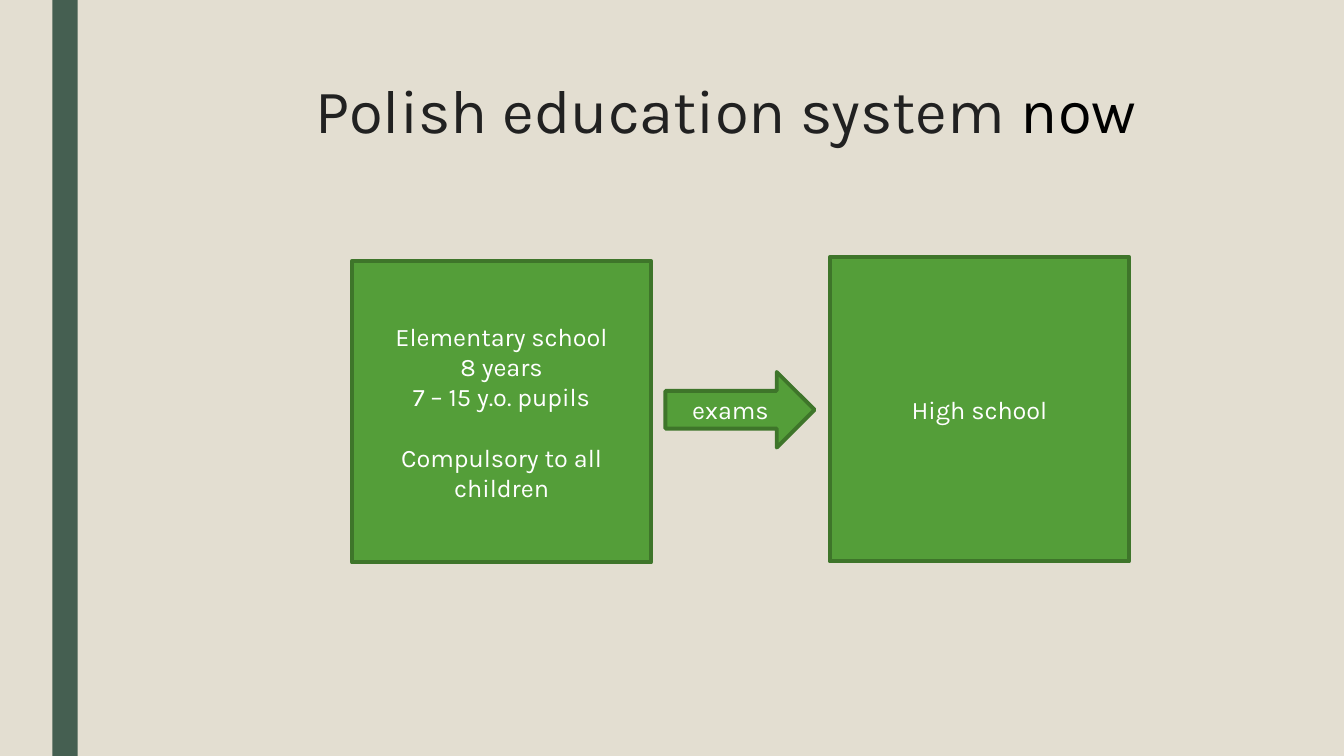
from dataclasses import dataclass

from pptx import Presentation
from pptx import util as u
from pptx.dml.color import RGBColor
from pptx.enum import shapes, text


@dataclass(frozen=True)
class Theme:
    font: str = "Karla"
    title_size: int = 44
    body_size: int = 18
    line_width: float = 2.75
    background: str = "E3DED1"
    bar: str = "455F51"
    fill: str = "549E39"
    outline: str = "3E752A"
    title: str = "212121"
    emphasis: str = "000000"
    label: str = "FFFFFF"


@dataclass(frozen=True)
class Area:
    """A rectangle in percent of the slide's width and height."""
    left: float
    top: float
    width: float
    height: float


@dataclass(frozen=True)
class Stage:
    area: Area
    kind: shapes.MSO_SHAPE
    lines: tuple[str, ...]
    closing: str = ""


THEME = Theme()
SLIDE_WIDTH, SLIDE_HEIGHT = u.Inches(13.33), u.Inches(7.5)
BAR_AREA = Area(3.9, 0, 1.88, 100)
TITLE_AREA = Area(11.25, 10, 85.52, 14.27)
STAGES = (
    Stage(Area(26.18, 34.53, 22.28, 39.87), shapes.MSO_SHAPE.RECTANGLE,
          ("Elementary school", "8 years", "7 – 15 y.o. pupils"),
          "Compulsory to all children"),
    Stage(Area(61.74, 34, 22.28, 40.27), shapes.MSO_SHAPE.RECTANGLE,
          ("High school",)),
    Stage(Area(49.51, 49.2, 11.1, 10), shapes.MSO_SHAPE.RIGHT_ARROW,
          ("exams",)),
)


def color(value: str) -> RGBColor:
    return RGBColor.from_string(value)


def place(area: Area) -> tuple[int, int, int, int]:
    """Turn percentages into left, top, width and height."""
    return (round(area.left * SLIDE_WIDTH / 100),
            round(area.top * SLIDE_HEIGHT / 100),
            round(area.width * SLIDE_WIDTH / 100),
            round(area.height * SLIDE_HEIGHT / 100))


def add_filled_shape(slide, kind: shapes.MSO_SHAPE, area: Area, fill: str):
    shape = slide.shapes.add_shape(kind, *place(area))
    shape.shadow.inherit = False
    shape.fill.solid()
    shape.fill.fore_color.rgb = color(fill)
    return shape


def add_bar(slide) -> None:
    bar = add_filled_shape(slide, shapes.MSO_SHAPE.RECTANGLE, BAR_AREA, THEME.bar)
    bar.line.fill.background()


def write_title(slide) -> None:
    title = slide.shapes.title
    title.left, title.top, title.width, title.height = place(TITLE_AREA)
    frame = title.text_frame
    frame.vertical_anchor = text.MSO_ANCHOR.TOP
    frame.word_wrap = True
    paragraph = frame.paragraphs[0]
    paragraph.alignment = text.PP_ALIGN.CENTER
    paragraph.line_spacing = 0.89
    paragraph.font.name = THEME.font
    paragraph.font.size = u.Pt(THEME.title_size)
    for words, shade in (("Polish education system ", THEME.title),
                         ("now", THEME.emphasis)):
        run = paragraph.add_run()
        run.text = words
        run.font.color.rgb = color(shade)


def add_stage(slide, stage: Stage) -> None:
    shape = add_filled_shape(slide, stage.kind, stage.area, THEME.fill)
    shape.line.color.rgb = color(THEME.outline)
    shape.line.width = u.Pt(THEME.line_width)
    frame = shape.text_frame
    frame.word_wrap = True
    frame.vertical_anchor = text.MSO_ANCHOR.MIDDLE
    lines = stage.lines + ((stage.closing,) if stage.closing else ())
    frame.text = "\n".join(lines)
    for paragraph in frame.paragraphs:
        paragraph.alignment = text.PP_ALIGN.CENTER
        paragraph.font.name = THEME.font
        paragraph.font.size = u.Pt(THEME.body_size)
        paragraph.font.color.rgb = color(THEME.label)
    if stage.closing:
        frame.paragraphs[-1].space_before = u.Pt(21.5)


def main() -> None:
    presentation = Presentation()
    presentation.slide_width = SLIDE_WIDTH
    presentation.slide_height = SLIDE_HEIGHT
    title_only = presentation.slide_layouts.get_by_name("Title Only")
    slide = presentation.slides.add_slide(title_only)
    slide.background.fill.solid()
    slide.background.fill.fore_color.rgb = color(THEME.background)
    add_bar(slide)
    write_title(slide)
    for stage in STAGES:
        add_stage(slide, stage)
    presentation.save("out.pptx")


if __name__ == "__main__":
    main()
